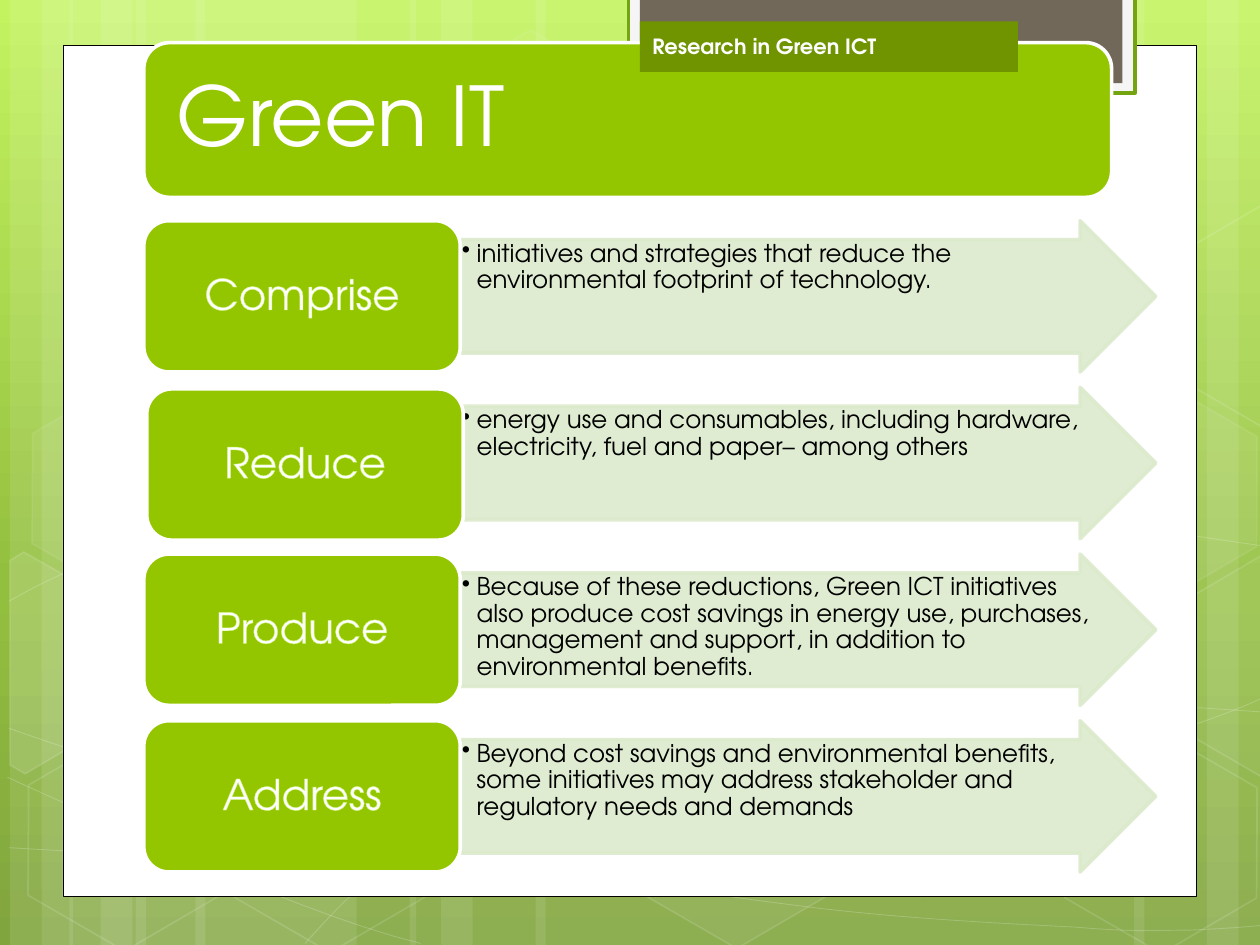
from pptx import Presentation
from pptx.dml.color import RGBColor
from pptx.enum.shapes import MSO_SHAPE
from pptx.enum.text import MSO_ANCHOR, MSO_AUTO_SIZE, PP_ALIGN
from pptx.oxml import parse_xml
from pptx.oxml.ns import nsdecls
from pptx.util import Cm, Pt

RECT, ROUND, ARROW, HEXAGON = (MSO_SHAPE.RECTANGLE, MSO_SHAPE.ROUNDED_RECTANGLE,
                               MSO_SHAPE.RIGHT_ARROW, MSO_SHAPE.HEXAGON)
TOP, MIDDLE = MSO_ANCHOR.TOP, MSO_ANCHOR.MIDDLE
LEFT, CENTER = PP_ALIGN.LEFT, PP_ALIGN.CENTER
FIXED = MSO_AUTO_SIZE.NONE

FONT = "TeX Gyre Adventor"
WHITE, GREEN, PALE = "FFFFFF", "94C600", "DCEACC"
BORDER = 2.08
WIDTH, HEIGHT = 25.4, 19.05

SKY = ((0, "C3F35F"), (62, "93BF3F"), (100, "81A53E"))
# Left edge and width of each light streak
STREAKS = ((2.74, 4.45), (0.2, 1.27), (0.84, 2.11), (3.94, 4.45), (1.4, 1.27), (2.03, 2.11),
           (18.62, 4.45), (24.33, 1.27), (22.86, 2.11), (10.8, 7.82), (8.26, 1.27), (8.89, 2.11))
# Bezier chains: a start point, then two handles and an end point per section
CURVES = (
    ((0.18, 17.09), (1.55, 17.17), (2.92, 17.25), (4.83, 17.22), (6.73, 17.2), (9.09, 17.15),
     (11.63, 16.89), (14.17, 16.64), (17.78, 16.15), (20.12, 15.67), (22.43, 15.19),
     (24.82, 14.43), (25.58, 14)),
    ((0.18, 12.12), (0.91, 11.71), (1.65, 11.33), (3.07, 10.95), (4.52, 10.57), (6.58, 10.01),
     (8.81, 9.83), (11.07, 9.65), (13.82, 9.63), (16.61, 9.83), (19.41, 10.03),
     (24.05, 10.82), (25.58, 11.02)),
    ((0.15, 15.67), (3.23, 17.07), (6.27, 18.47), (8.48, 19.02)),
    ((0.18, 14.68), (0.97, 14.96), (1.78, 15.24), (3.25, 15.65), (4.72, 16.03), (6.93, 16.66),
     (9.07, 17.09), (11.18, 17.53), (13.84, 17.98), (15.95, 18.24), (18.06, 18.52),
     (20.32, 18.62), (21.67, 18.69), (22.99, 18.8), (23.34, 18.75), (24, 18.75),
     (24.66, 18.72), (25.12, 18.69), (25.58, 18.64)),
    ((6.15, 19.02), (6.6, 18.52), (7.06, 18.01), (7.67, 17.55), (8.28, 17.09), (9.14, 16.59),
     (9.86, 16.23), (10.57, 15.88), (11, 15.72), (11.94, 15.47), (12.88, 15.21),
     (14.55, 14.86), (15.44, 14.68), (16.36, 14.5), (16.48, 14.5), (17.27, 14.45),
     (18.06, 14.38), (19.3, 14.3), (20.17, 14.27), (21.06, 14.25), (22.5, 14.27),
     (22.5, 14.27), (22.5, 14.27), (24.21, 14.27), (24.21, 14.27), (24.66, 14.3),
     (25.1, 14.33), (25.55, 14.36)),
)
# Left, top, fill opacity (0 for none) and line opacity
HEXAGONS = ((8.48, 0.91, 4, 8), (12.62, 14.96, 6, 12), (0.28, 15.01, 0, 12), (0.36, 7.92, 7, 8),
            (4.42, 15.04, 0, 12), (19.13, 11.51, 10, 12), (21.18, 15.06, 0, 12),
            (21.18, 7.98, 7, 8))
LEFT_CUT = ((0.2, 11.3), (0.48, 11.13), (2.44, 12.24), (2.41, 14.48), (0.51, 15.6), (0.2, 15.42))
RIGHT_CUT = ((23.52, 12.32), (25.43, 11.2), (25.63, 11.33), (25.63, 15.57), (25.45, 15.67),
             (23.52, 14.55))
RIGHT_CUT_RISE = 7.06

# Heading, detail and the offset of the heading card
ROWS = (
    ("Comprise", "initiatives and strategies that reduce the environmental footprint of "
     "technology.", (0, 0)),
    ("Reduce", "energy use and consumables, including hardware, electricity, fuel and paper– "
     "among others", (0.06, 0.03)),
    ("Produce", "Because of these reductions, Green ICT initiatives also produce cost savings in "
     "energy use, purchases, management and support, in addition to environmental benefits.",
     (0, 0)),
    ("Address", "Beyond cost savings and environmental benefits, some initiatives may address "
     "stakeholder and regulatory needs and demands", (0, 0)),
)


def color(value):
    return RGBColor.from_string(value)


def set_all(target, values):
    for name, value in values.items():
        setattr(target, name, value)


def finish(shape, fill=None, line=None, width=1, fill_alpha=100, line_alpha=100):
    shape.shadow.inherit = False
    if fill:
        shape.fill.solid()
        shape.fill.fore_color.rgb = color(fill)
    else:
        shape.fill.background()
    if line:
        shape.line.color.rgb = color(line)
        shape.line.width = Pt(width)
    else:
        shape.line.fill.background()
    for place, alpha in (("a:solidFill", fill_alpha), ("a:ln/a:solidFill", line_alpha)):
        if alpha < 100:
            for node in shape.element.spPr.xpath(f"{place}/a:srgbClr"):
                node.append(parse_xml(f'<a:alpha {nsdecls("a")} val="{alpha * 1000}"/>'))
    return shape


def add_shape(page, kind, box, **look):
    return finish(page.shapes.add_shape(kind, *map(Cm, box)), **look)


def add_outline(page, points, closed, **look):
    corners = [(Cm(x), Cm(y)) for x, y in points]
    builder = page.shapes.build_freeform(*corners[0])
    builder.add_line_segments(corners[1:], close=closed)
    return finish(builder.convert_to_shape(), **look)


def write(shape, text, size, tint, align=LEFT, anchor=MIDDLE, insets=(0.25, 0.13), spacing=0.9,
          bold=False, bullet=False, outline=None):
    side, edge = map(Cm, insets)
    frame = shape.text_frame
    set_all(frame, {"word_wrap": True, "auto_size": FIXED, "vertical_anchor": anchor,
                    "margin_left": side, "margin_right": side,
                    "margin_top": edge, "margin_bottom": edge})
    para = frame.paragraphs[0]
    if bullet:
        props = para._p.get_or_add_pPr()
        props.set("marL", str(Cm(0.3)))
        props.set("indent", str(-Cm(0.3)))
        props.append(parse_xml(f'<a:buChar {nsdecls("a")} char="•"/>'))
    set_all(para, {"alignment": align, "line_spacing": spacing})
    span = para.add_run()
    span.text = text
    set_all(span.font, {"name": FONT, "size": Pt(size), "bold": bold})
    span.font.color.rgb = color(tint)
    if outline:
        span._r.get_or_add_rPr().insert(0, parse_xml(
            f'<a:ln {nsdecls("a")} w="{Pt(1.45)}"><a:solidFill>'
            f'<a:srgbClr val="{outline}"/></a:solidFill></a:ln>'))


def sample(chain, steps=12):
    """Turn a Bezier chain into the points of a fine polyline."""
    points = [chain[0]]
    for start in range(0, len(chain) - 1, 3):
        section = chain[start:start + 4]
        for step in range(1, steps + 1):
            t = step / steps
            weights = ((1 - t) ** 3, 3 * t * (1 - t) ** 2, 3 * t * t * (1 - t), t ** 3)
            points.append(tuple(sum(w * point[axis] for w, point in zip(weights, section))
                                for axis in (0, 1)))
    return points


def draw_backdrop(page):
    stops = "".join(f'<a:gs pos="{place * 1000}"><a:srgbClr val="{tint}"/></a:gs>'
                    for place, tint in SKY)
    page.element.cSld.insert(0, parse_xml(
        f'<p:bg {nsdecls("p", "a")}><p:bgPr><a:gradFill><a:gsLst>{stops}</a:gsLst>'
        '<a:lin ang="5400000" scaled="0"/></a:gradFill><a:effectLst/></p:bgPr></p:bg>'))
    for left, width in STREAKS:
        add_shape(page, RECT, (left, 0, width, HEIGHT), fill=WHITE, fill_alpha=10)
    for chain in CURVES:
        add_outline(page, sample(chain), False, line=WHITE, width=0.5, line_alpha=20)
    for left, top, fill_alpha, line_alpha in HEXAGONS:
        cell = add_shape(page, HEXAGON, (left, top, 4.45, 3.86), fill=WHITE if fill_alpha else None,
                         line=WHITE, fill_alpha=fill_alpha, line_alpha=line_alpha)
        cell.rotation = 30
        cell.adjustments[0] = 0.285
    upper_cut = [(x, y - RIGHT_CUT_RISE) for x, y in RIGHT_CUT]
    for points, fill, alpha in ((LEFT_CUT, WHITE, 10), (RIGHT_CUT, WHITE, 4), (upper_cut, None, 0)):
        add_outline(page, points, True, fill=fill, line=WHITE, fill_alpha=alpha, line_alpha=12)


def draw_sheet(page, box):
    left, top, width, height = box
    add_shape(page, RECT, box, fill=WHITE, line="000000", width=0.5)
    # Tab hanging from the top edge
    add_shape(page, RECT, (left + 11.4, -0.05, 10.21, 1.93), fill="F5F5F5", line="74A510",
              width=BORDER)
    add_shape(page, RECT, (left + 11.63, -0.05, 9.73, 1.73), fill="71685A")


def draw_title(page, box):
    left, top, width, height = box
    add_shape(page, ROUND, box, fill=GREEN, line=WHITE, width=BORDER)
    title = page.shapes.title
    set_all(title, {"left": Cm(left + 0.15), "top": Cm(top + 0.15),
                    "width": Cm(width - 0.3), "height": Cm(height - 0.3)})
    write(title, "Green IT", 47, WHITE, insets=(0.51, 0.51))
    page.shapes.element.append(title.element)  # bring in front of its panel


def draw_row(page, box, heading, detail, offset):
    left, top, width, height = box
    card_width = 6.38
    arrow = add_shape(page, ARROW, (left + card_width, top, width - card_width, height),
                      fill=PALE, line=PALE, width=BORDER, fill_alpha=90, line_alpha=90)
    arrow.adjustments[0] = 0.75
    write(arrow, detail, 14, "000000", anchor=TOP, insets=(0.03, 0.03), bullet=True)
    card = add_shape(page, ROUND, (left + offset[0], top + offset[1], card_width, height),
                     fill=GREEN, line=WHITE, width=BORDER)
    write(card, heading, 24, WHITE, align=CENTER, insets=(0.4, 0.28), outline="CAF278")


def draw_label(page, box):
    label = add_shape(page, RECT, box, fill="6F9400")
    write(label, "Research in Green ICT", 12, "FEFEFE", spacing=1.0, bold=True)


def main():
    deck = Presentation()
    deck.slide_width, deck.slide_height = Cm(WIDTH), Cm(HEIGHT)
    page = deck.slides.add_slide(deck.slide_layouts[5])
    draw_backdrop(page)
    draw_sheet(page, (1.27, 0.91, 22.86, 17.17))
    draw_title(page, (2.9, 0.86, 19.51, 3.12))
    for index, row in enumerate(ROWS):
        draw_row(page, (2.9, 4.45 + index * 3.36, 20.4, 3.05), *row)
    draw_label(page, (12.9, 0.43, 7.62, 1.02))
    deck.save("out.pptx")


if __name__ == "__main__":
    main()
